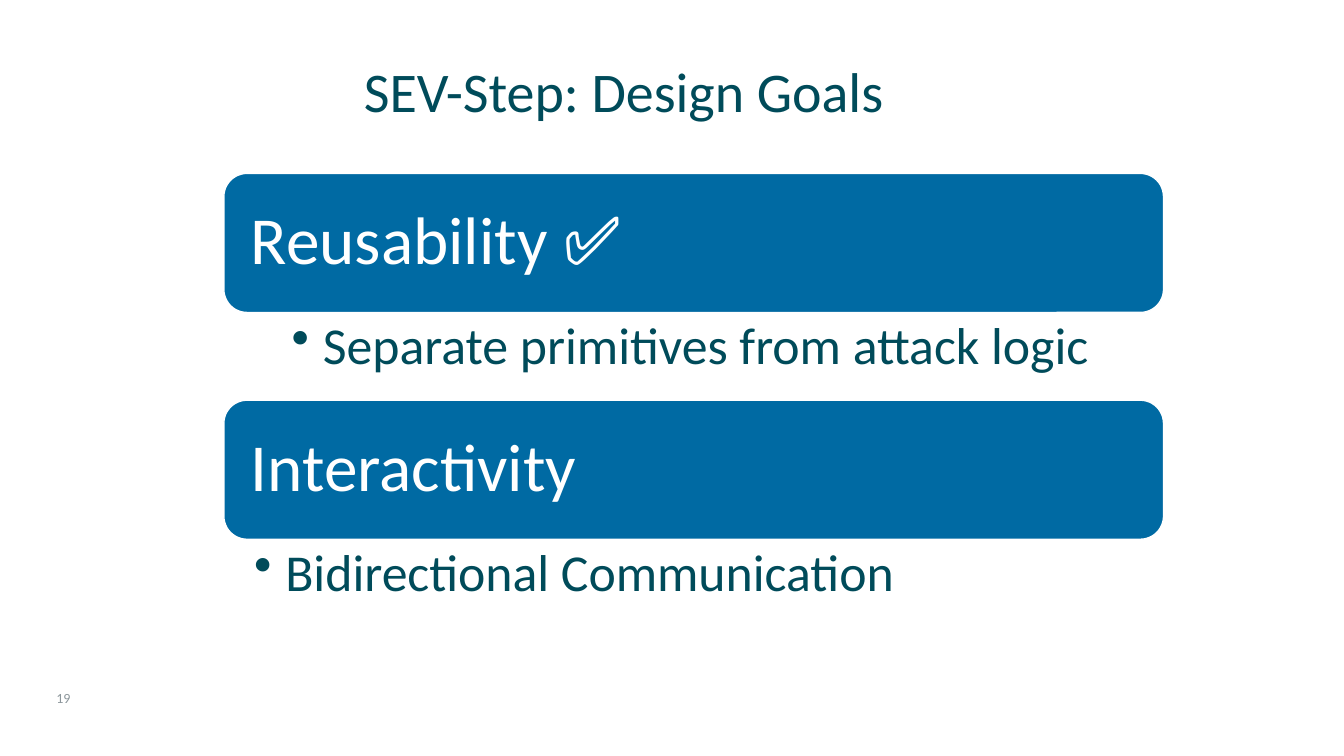
from lxml import etree
from pptx import Presentation
from pptx.dml.color import RGBColor
from pptx.enum.shapes import MSO_SHAPE
from pptx.enum.text import MSO_ANCHOR, PP_ALIGN
from pptx.oxml.ns import qn
from pptx.util import Pt

PX = 9144
FONT = "Calibri"
BLUE = RGBColor(0x00, 0x6A, 0xA3)
TEAL = RGBColor(0x00, 0x4B, 0x5A)
GRAY = RGBColor(0x8C, 0x96, 0x9B)
WHITE = RGBColor(0xFF, 0xFF, 0xFF)
ROUNDED = MSO_SHAPE.ROUNDED_RECTANGLE
TOP, MIDDLE = MSO_ANCHOR.TOP, MSO_ANCHOR.MIDDLE
LEFT, CENTER = PP_ALIGN.LEFT, PP_ALIGN.CENTER

BANNER_HEIGHT = 138
BULLET_INDENT = 31
GOALS = [
    ("Reusability ✅", "Separate primitives from attack logic", CENTER),
    ("Interactivity", "Bidirectional Communication", LEFT),
]


def to_emu(box):
    """Turn a box in px into EMU."""
    return [length * PX for length in box]


def write_text(shape, text, size, color, anchor=MIDDLE, insets=(10, 5, 10, 5),
               align=LEFT, bullet=False, line_spacing=0.9):
    """Fill a shape with one formatted paragraph."""
    frame = shape.text_frame
    frame.word_wrap = True
    frame.vertical_anchor = anchor
    (frame.margin_left, frame.margin_top,
     frame.margin_right, frame.margin_bottom) = to_emu(insets)
    paragraph = frame.paragraphs[0]
    if bullet:
        properties = paragraph._p.get_or_add_pPr()
        properties.set("marL", str(BULLET_INDENT * PX))
        properties.set("indent", str(-BULLET_INDENT * PX))
        etree.SubElement(properties, qn("a:buChar")).set("char", "•")
    paragraph.alignment = align
    paragraph.line_spacing = line_spacing
    run = paragraph.add_run()
    run.text = text
    run.font.name = FONT
    run.font.size = Pt(size)
    run.font.color.rgb = color


def add_label(slide, box, text, size, color, **options):
    """Add a text box holding one paragraph."""
    write_text(slide.shapes.add_textbox(*to_emu(box)), text, size, color, **options)


def add_goal(slide, box, heading, detail, align):
    """Add a banner with its bulleted detail underneath."""
    left, top, width, height = box
    banner = slide.shapes.add_shape(ROUNDED, *to_emu((left, top, width, BANNER_HEIGHT)))
    banner.shadow.inherit = False
    banner.fill.solid()
    banner.fill.fore_color.rgb = BLUE
    banner.line.color.rgb = WHITE
    banner.line.width = Pt(1)
    write_text(banner, heading, 48, WHITE, insets=(20, 20, 20, 20))
    detail_box = (left, top + BANNER_HEIGHT, width, height - BANNER_HEIGHT)
    add_label(slide, detail_box, detail, 37, TEAL, anchor=TOP,
              insets=(30, 7, 37, 7), align=align, bullet=True)


def add_goals(slide, box):
    """Stack the goals evenly in the given box."""
    left, top, width, height = box
    step = height // len(GOALS)
    for index, goal in enumerate(GOALS):
        add_goal(slide, (left, top + index * step, width, step), *goal)


def main():
    """Build and save the slide."""
    presentation = Presentation()
    presentation.slide_width, presentation.slide_height = to_emu((1333, 750))
    slide = presentation.slides.add_slide(presentation.slide_layouts[6])
    add_label(slide, (46, 680, 49, 25), "19", 10, GRAY, line_spacing=1.0)
    add_label(slide, (351, 45, 889, 98), "SEV-Step: Design Goals", 40, TEAL)
    add_goals(slide, (222, 172, 932, 450))
    presentation.save("out.pptx")


if __name__ == "__main__":
    main()
